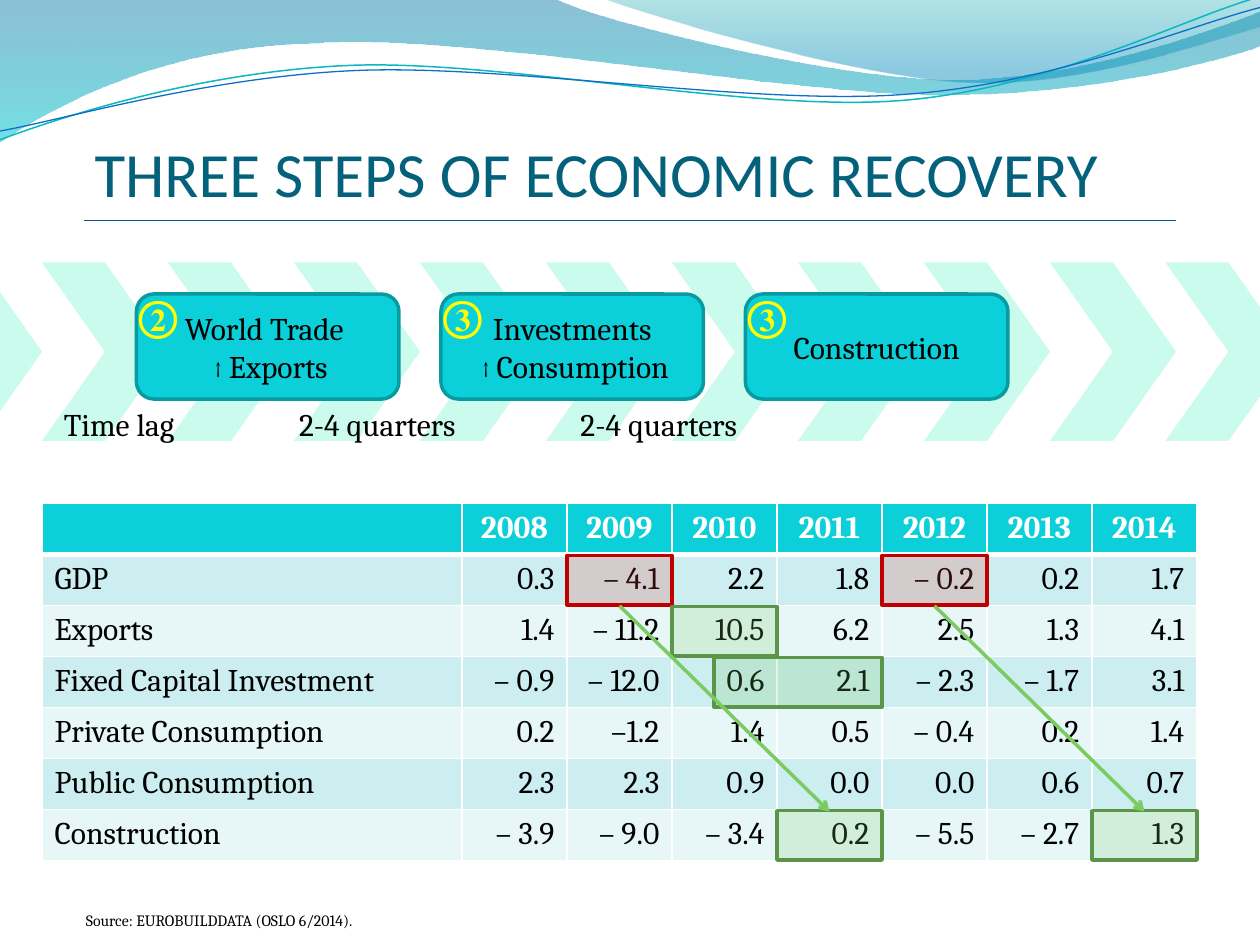
import pptx
import pptx.dml.color
import pptx.enum.shapes
import pptx.enum.text
import pptx.oxml
import pptx.oxml.ns
import pptx.util

SHAPE = pptx.enum.shapes.MSO_SHAPE
ALIGN = pptx.enum.text.PP_ALIGN
ANCHOR = pptx.enum.text.MSO_ANCHOR
NS = pptx.oxml.ns.nsdecls("a")

COLORS = {
    "title": "04617B", "rule": "095295", "text": "000000", "white": "FFFFFF",
    "chevron": "CAFBED", "cyan": "0BD0D9", "cyan_edge": "089AA1",
    "band_dark": "CCEEF1", "band_light": "E7F7F8", "number": "FFFF00",
    "green": "7CCA62", "green_edge": "5C9549", "red": "F1483B",
    "red_edge": "C00000", "wave_blue": "0074A1",
    "wave_cyan": "00C6CF", "wave_teal": "00A1A9", "wave_sky": "008BBF",
    "line_teal": "0AB8BF", "line_blue": "0F6FC6",
}

# Waves: Bezier pieces in percent of the slide width; each piece continues
# from the end of the one before (one point: straight, three points: curve).
WAVE_LEFT = [
    [(0, 0)], [(44, -.1)],
    [(47.6, 1.7), (66.4, 6.3), (75.8, 6.3)], [(85.3, 6.3), (95.8, 2.6), (100, .9)],
    [(100.1, 3.6)], [(98.3, 4.4), (87, 7.6), (74.6, 7.5)],
    [(62.2, 7.5), (38.2, 2.8), (25.7, 3.4)], [(12.9, 3.6), (4.6, 8.3), (-.1, 11.3)],
]
WAVE_RIGHT = [
    [(47.9, -.1)], [(50.9, 1.1), (68.2, 6.2), (76.9, 6.5)],
    [(85.6, 6.9), (96.1, 3.2), (100, 2.1)], [(100, 0)],
]
TEAL_CURVE = [
    [(0, 11.1)], [(4.8, 9.3), (15.8, 5.7), (27.7, 5.2)],
    [(39.5, 4.7), (59.3, 8.9), (71.3, 8)], [(83.3, 7.1), (93.8, 1.5), (99.8, -.2)],
]
BLUE_CURVE = [
    [(0, 10.4)], [(4.7, 9.6), (16.4, 6.1), (28.3, 5.6)],
    [(40.3, 5.1), (59.7, 8.4), (71.7, 7.5)], [(83.6, 6.7), (94.1, 2.1), (100, .6)],
]

TABLE_LEFT, TABLE_TOP, LABEL_W, YEAR_W, ROW_H = 4, 47.95, 40, 10, 4.86
TABLE = [
    ["", "2008", "2009", "2010", "2011", "2012", "2013", "2014"],
    ["GDP", "0.3", "– 4.1", "2.2", "1.8", "– 0.2", "0.2", "1.7"],
    ["Exports", "1.4", "– 11.2", "10.5", "6.2", "2.5", "1.3", "4.1"],
    ["Fixed Capital Investment", "– 0.9", "– 12.0", "0.6", "2.1", "– 2.3", "– 1.7", "3.1"],
    ["Private Consumption", "0.2", "–1.2", "1.4", "0.5", "– 0.4", "0.2", "1.4"],
    ["Public Consumption", "2.3", "2.3", "0.9", "0.0", "0.0", "0.6", "0.7"],
    ["Construction", "– 3.9", "– 9.0", "– 3.4", "0.2", "– 5.5", "– 2.7", "1.3"],
]


def rgb(name):
    return pptx.dml.color.RGBColor.from_string(COLORS[name])


def set_opacity(sp, *shares):
    """Give each fill colour of the shape, in order, its opacity in percent."""
    for clr, share in zip(sp.element.spPr.iter(pptx.oxml.ns.qn("a:srgbClr")), shares):
        clr.append(pptx.oxml.parse_xml(f'<a:alpha {NS} val="{share * 1000}"/>'))


def bend(sp, pieces):
    """Join the straight segments of each three-point piece into one curve."""
    segments = iter(list(sp.element.spPr.iter(pptx.oxml.ns.qn("a:lnTo"))))
    for piece in pieces[1:]:
        nodes = [next(segments) for _ in piece]
        if len(nodes) == 3:
            curve = pptx.oxml.parse_xml(f"<a:cubicBezTo {NS}/>")
            nodes[0].addprevious(curve)
            for node in nodes:
                curve.append(node[0])
                node.getparent().remove(node)


class Slide:
    """Holds the text style and the slide, on a grid of 120 columns by 90 rows."""

    def __init__(self, prs, font="Cambria", size=18):
        self.s = prs.slides.add_slide(prs.slide_layouts[5])
        self.unit = prs.slide_width / 120
        self.percent = prs.slide_width / 100
        self.font, self.size = font, size

    def grid(self, *lengths):
        return [pptx.util.Emu(round(n * self.unit)) for n in lengths]

    def style(self, p, size=None, color="text", bold=False, font=None):
        for r in p.runs:
            r.font.name, r.font.size = font or self.font, pptx.util.Pt(size or self.size)
            r.font.color.rgb, r.font.bold = rgb(color), bold

    def title(self, text, *box):
        sp = self.s.shapes.title
        sp.left, sp.top, sp.width, sp.height = self.grid(*box)
        tf = sp.text_frame
        tf.text = text
        tf.auto_size = pptx.enum.text.MSO_AUTO_SIZE.NONE
        tf.vertical_anchor = ANCHOR.BOTTOM
        tf.margin_left = tf.margin_right = tf.margin_bottom = 0
        tf.paragraphs[0].alignment = ALIGN.LEFT
        self.style(tf.paragraphs[0], 36, "title", font="Calibri")

    def text(self, text, *box, tabs=(), **look):
        tf = self.s.shapes.add_textbox(*self.grid(*box)).text_frame
        tf.word_wrap = True
        p = tf.paragraphs[0]
        p.text = text
        self.style(p, **look)
        if tabs:
            stops = "".join(f'<a:tab pos="{x}" algn="l"/>' for x in self.grid(*tabs))
            p._p.get_or_add_pPr().append(
                pptx.oxml.parse_xml(f"<a:tabLst {NS}>{stops}</a:tabLst>"))

    def shape(self, kind, fill, *box, edge=None, opacity=None):
        sp = self.s.shapes.add_shape(kind, *self.grid(*box))
        sp.shadow.inherit = False
        sp.fill.solid()
        sp.fill.fore_color.rgb = rgb(fill)
        if opacity:
            set_opacity(sp, opacity)
        if edge:
            sp.line.color.rgb, sp.line.width = rgb(edge), pptx.util.Pt(2)
        else:
            sp.line.fill.background()
        return sp

    def step(self, left, number, pieces):
        sp = self.shape(SHAPE.ROUNDED_RECTANGLE, "cyan", left, 28, 25, 10, edge="cyan_edge")
        sp.text_frame.vertical_anchor = ANCHOR.MIDDLE
        p = sp.text_frame.paragraphs[0]
        p.text = pieces[0]
        p.alignment = ALIGN.CENTER
        for piece in pieces[1:]:
            p.add_run().text = piece
        self.style(p)
        for r in p.runs:
            if r.text == "↑":
                r.font.size = pptx.util.Pt(14)
        self.text(number, left - 1, 27, 8, 6, size=24, color="number", bold=True)

    def highlight(self, color, row, year, years=1):
        """Frame table cells, from a year column that may be fractional."""
        self.shape(SHAPE.RECTANGLE, color, TABLE_LEFT + LABEL_W + (year - 2008) * YEAR_W,
                   TABLE_TOP + row * ROW_H + .1, years * YEAR_W, 4.7,
                   edge=color + "_edge", opacity=20)

    def line(self, color, width, x1, y1, x2, y2, arrow=False):
        sp = self.s.shapes.add_connector(
            pptx.enum.shapes.MSO_CONNECTOR.STRAIGHT, *self.grid(x1, y1, x2, y2))
        sp.line.color.rgb, sp.line.width = rgb(color), pptx.util.Pt(width)
        if arrow:
            sp.line._get_or_add_ln().append(
                pptx.oxml.parse_xml(f'<a:tailEnd {NS} type="arrow"/>'))
        sp.element.spPr.append(pptx.oxml.parse_xml(f"<a:effectLst {NS}/>"))

    def wave(self, pieces, stops=None, line=None):
        """Draw a wave: stops are (position, colour, opacity), line is (colour, width)."""
        points = [(round(x * self.percent), round(y * self.percent))
                  for piece in pieces for x, y in piece]
        fb = self.s.shapes.build_freeform(*points[0], scale=1.0)
        fb.add_line_segments(points[1:], close=bool(stops))
        sp = fb.convert_to_shape()
        bend(sp, pieces)
        sp.shadow.inherit = False
        if stops:
            sp.fill.gradient()
            sp.fill.gradient_angle = 270
            for stop, (position, color, _) in zip(sp.fill.gradient_stops, stops):
                stop.position, stop.color.rgb = position, rgb(color)
            set_opacity(sp, *(share for _, _, share in stops))
            sp.line.fill.background()
        else:
            sp.fill.background()
            sp.line.color.rgb, sp.line.width = rgb(line[0]), pptx.util.Pt(line[1])

    def cell(self, cell, text, fill, align, **look):
        tcPr = cell._tc.get_or_add_tcPr()
        for side in "LRTB":
            width = pptx.util.Pt(3 if side == "B" and fill == "cyan" else 1)
            tcPr.append(pptx.oxml.parse_xml(
                f'<a:ln{side} {NS} w="{width}"><a:solidFill><a:srgbClr '
                f'val="{COLORS["white"]}"/></a:solidFill></a:ln{side}>'))
        cell.fill.solid()
        cell.fill.fore_color.rgb = rgb(fill)
        p = cell.text_frame.paragraphs[0]
        p.text, p.alignment = text, align
        self.style(p, **look)

    def table(self, rows):
        years = len(rows[0]) - 1
        box = self.grid(TABLE_LEFT, TABLE_TOP, LABEL_W + years * YEAR_W, len(rows) * ROW_H)
        table = self.s.shapes.add_table(len(rows), years + 1, *box).table
        for col, width in zip(table.columns, self.grid(LABEL_W, *[YEAR_W] * years)):
            col.width = width
        for i, row in enumerate(rows):
            table.rows[i].height = self.grid(ROW_H)[0]
            for j, text in enumerate(row):
                if i == 0:
                    self.cell(table.cell(i, j), text, "cyan", ALIGN.CENTER,
                              color="white", bold=True)
                else:
                    self.cell(table.cell(i, j), text, "band_dark" if i % 2 else "band_light",
                              ALIGN.RIGHT if j else ALIGN.LEFT)


def main():
    prs = pptx.Presentation()
    prs.slide_width, prs.slide_height = pptx.util.Inches(10), pptx.util.Inches(7.5)
    s = Slide(prs)
    s.wave(WAVE_LEFT, stops=[(0, "wave_blue", 45), (1, "wave_cyan", 55)])
    s.wave(WAVE_RIGHT, stops=[(0, "wave_teal", 30), (.8, "wave_sky", 45)])
    s.wave(TEAL_CURVE, line=("line_teal", .85))
    s.wave(BLUE_CURVE, line=("line_blue", .75))
    for left in [*range(-8, 101, 12), 111]:
        s.shape(SHAPE.CHEVRON, "chevron", left, 25, 12, 17)
    s.title("THREE STEPS OF ECONOMIC RECOVERY", 9, 9.2, 105, 10.8)
    s.line("rule", .75, 8, 21, 112, 21)
    s.table(TABLE)
    s.step(13, "②", ["World Trade \v ", "↑", " Exports"])
    s.step(42, "③", ["Investments\v ", "↑", " Consumption"])
    s.step(71, "③", ["Construction"])
    s.text("\tTime lag\t2-4 quarters\t2-4 quarters", 1, 38, 96, 4.8, tabs=(3.9, 26.3, 53.1))
    for year in (2009, 2012):
        s.highlight("red", 1, year)
        s.highlight("green", 6, year + 2)
    s.highlight("green", 2, 2010)
    s.highlight("green", 3, 2010.4, 1.6)
    for x in (59, 89):
        s.line("green", 2, x, 57.7, x + 20, 77.3, arrow=True)
    s.text("Source: EUROBUILDDATA (OSLO 6/2014).", 7, 86.1, 40, 3, size=9)
    prs.save("out.pptx")


if __name__ == "__main__":
    main()
